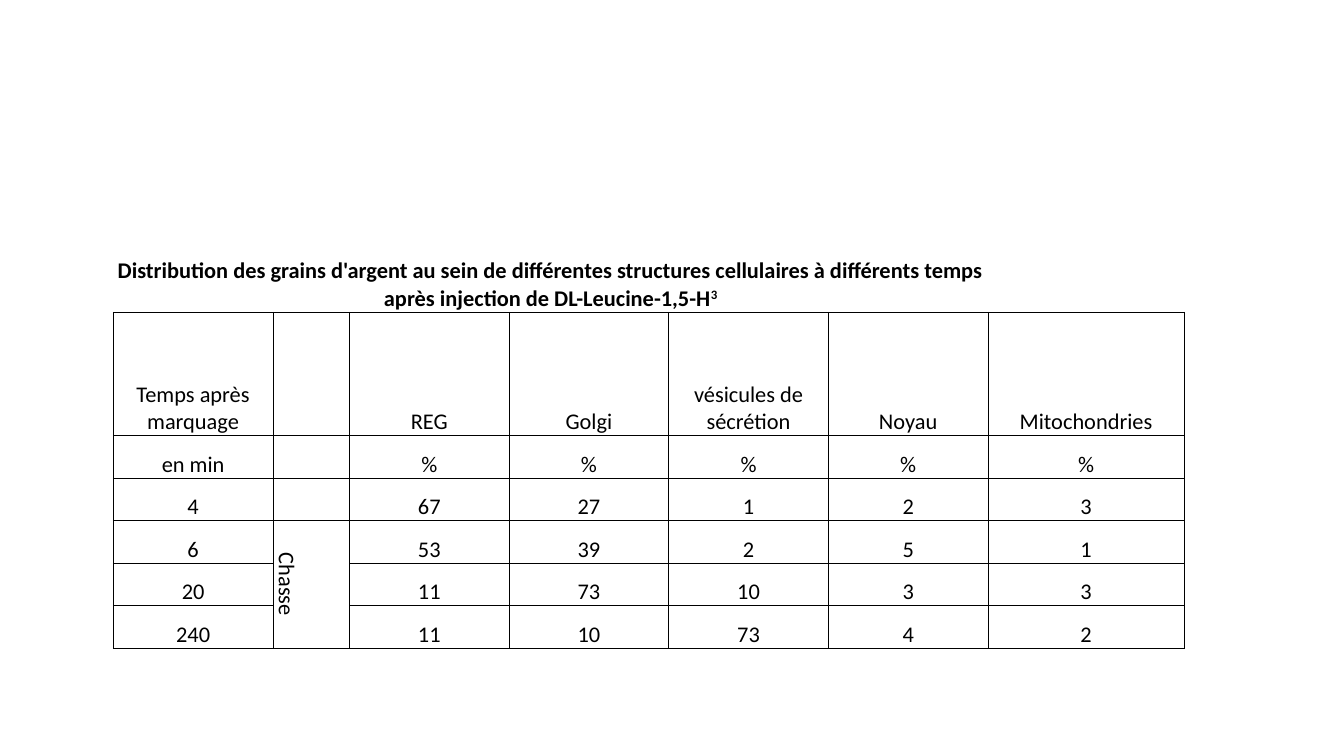
import lxml.etree
import pptx
import pptx.dml.color
import pptx.enum.text
import pptx.oxml.ns
import pptx.util

GRID_COLUMNS = 1000
GRID_ROWS = GRID_COLUMNS * 9 / 16
UNIT = pptx.util.Inches(0.01)
COLORS = {"ink": "000000"}
TEXT_FORMAT = {"name": "Calibri", "size": pptx.util.Pt(12), "bold": False}
TITLE_FORMAT = {**TEXT_FORMAT, "bold": True}
CELL_FORMAT = {
    "margin_left": UNIT,
    "margin_right": UNIT,
    "margin_top": UNIT,
    "margin_bottom": 0,
    "vertical_anchor": pptx.enum.text.MSO_ANCHOR.BOTTOM,
}
TABLE_FORMAT = {"first_row": False, "horz_banding": False}
TITLE = (
    "Distribution des grains d'argent au sein de différentes structures cellulaires "
    "à différents temps après injection de DL-Leucine-1,5-H"
)
CONTENT = [
    [TITLE, "", "", "", "", "", ""],
    ["Temps après marquage", "", "REG", "Golgi", "vésicules de sécrétion", "Noyau", "Mitochondries"],
    ["en min", "", "%", "%", "%", "%", "%"],
    ["4", "", "67", "27", "1", "2", "3"],
    ["6", "Chasse", "53", "39", "2", "5", "1"],
    ["20", "", "11", "73", "10", "3", "3"],
    ["240", "", "11", "10", "73", "4", "2"],
]


def apply_format(target, values):
    """Set every attribute named in values on the target."""
    for name, value in values.items():
        setattr(target, name, value)


def add_span(para, text, values):
    """Add a formatted run to a paragraph and return it."""
    span = para.add_run()
    span.text = text
    apply_format(span.font, values)
    span.font.color.rgb = pptx.dml.color.RGBColor.from_string(COLORS["ink"])
    return span


def set_borders(cell, visible):
    """Draw the named sides of a cell and hide the others."""
    properties = cell._tc.get_or_add_tcPr()
    qualify = pptx.oxml.ns.qn
    for side in "LRTB":
        line = lxml.etree.SubElement(properties, qualify(f"a:ln{side}"), w=str(pptx.util.Pt(0.5)))
        if side in visible:
            fill = lxml.etree.SubElement(line, qualify("a:solidFill"))
            lxml.etree.SubElement(fill, qualify("a:srgbClr"), val=COLORS["ink"])
        else:
            lxml.etree.SubElement(line, qualify("a:noFill"))


def fill_cell(cell, text, values, visible):
    """Style one cell and write its centred text."""
    set_borders(cell, visible)
    cell.fill.background()
    apply_format(cell, CELL_FORMAT)
    para = cell.text_frame.paragraphs[0]
    para.alignment = pptx.enum.text.PP_ALIGN.CENTER
    if text:
        add_span(para, text, values)


def add_distribution_table(page, box):
    """Place the grain distribution table in a box of grid units."""
    left, top, width, height = box
    narrow, wide, title_row, heading_row = 57, 146, 107, 92
    column = (width - narrow - wide) / 5
    row = (height - title_row - heading_row) / 5
    widths = [column, narrow] + [column] * 4 + [wide]
    heights = [title_row, heading_row] + [row] * 5

    frame = page.shapes.add_table(len(heights), len(widths), *(int(UNIT * length) for length in box))
    table = frame.table
    apply_format(table, TABLE_FORMAT)
    for index, length in enumerate(widths):
        table.columns[index].width = int(UNIT * length)
    for index, length in enumerate(heights):
        table.rows[index].height = int(UNIT * length)

    table.cell(0, 0).merge(table.cell(0, 5))
    table.cell(4, 1).merge(table.cell(6, 1))
    for row_index, texts in enumerate(CONTENT):
        values, visible = (TEXT_FORMAT, "LRTB") if row_index else (TITLE_FORMAT, "B")
        for column_index, text in enumerate(texts):
            fill_cell(table.cell(row_index, column_index), text, values, visible)

    exponent = add_span(table.cell(0, 0).text_frame.paragraphs[0], "3", TITLE_FORMAT)
    exponent._r.get_or_add_rPr().set("baseline", "30000")
    table.cell(4, 1)._tc.get_or_add_tcPr().set("vert", "vert")


def main():
    """Build the deck and save it."""
    deck = pptx.Presentation()
    deck.slide_width = UNIT * GRID_COLUMNS
    deck.slide_height = int(UNIT * GRID_ROWS)
    page = deck.slides.add_slide(deck.slide_layouts[6])
    add_distribution_table(page, (84.3, 125.4, 797, 357))
    deck.save("out.pptx")


if __name__ == "__main__":
    main()
